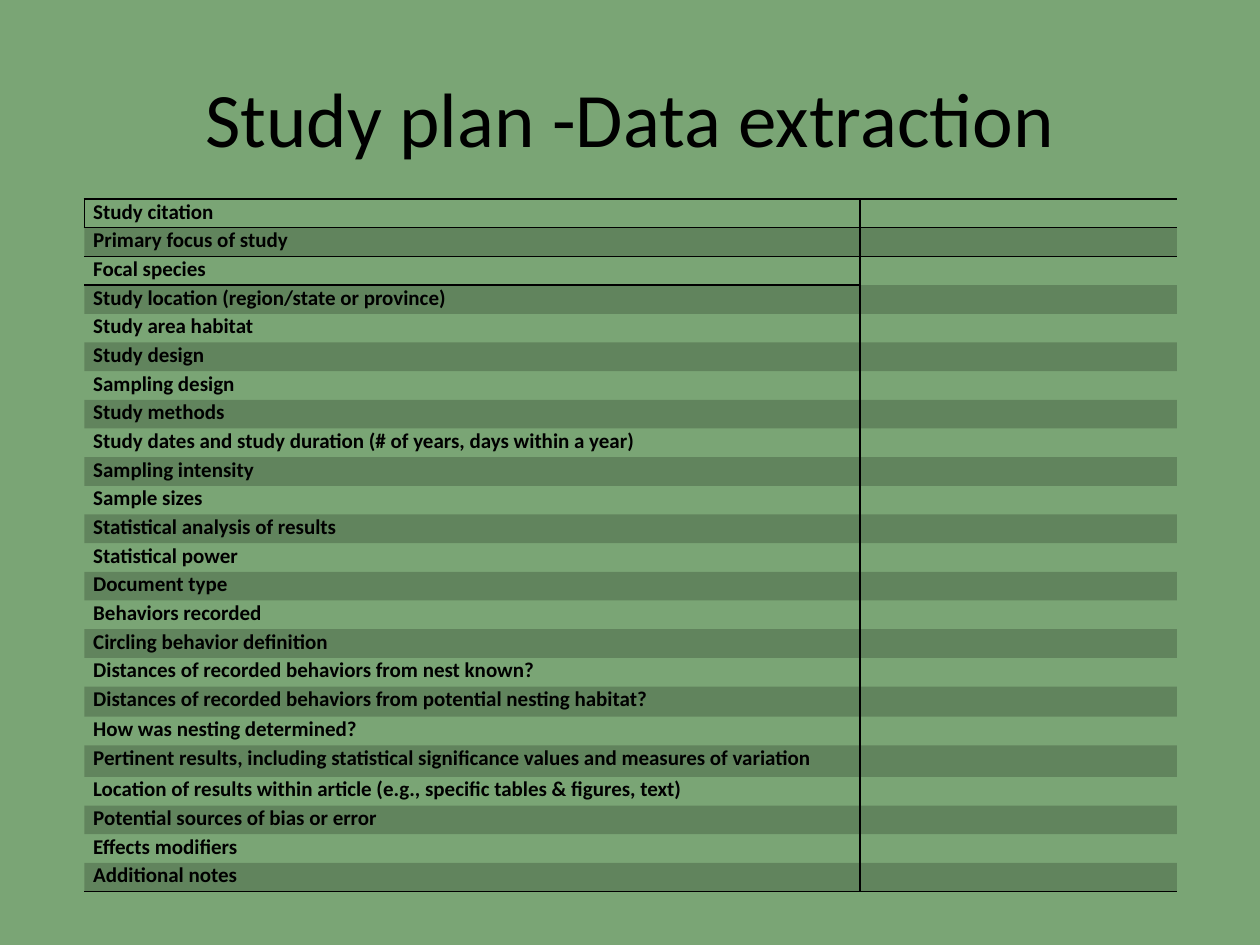
from lxml import etree
from pptx import Presentation
from pptx import util as u
from pptx.dml.color import RGBColor
from pptx.enum import text
from pptx.oxml.ns import qn

TITLE = "Study plan -Data extraction"
FIELDS = [
    "Study citation",
    "Primary focus of study",
    "Focal species",
    "Study location (region/state or province)",
    "Study area habitat",
    "Study design",
    "Sampling design",
    "Study methods",
    "Study dates and study duration (# of years, days within a year)",
    "Sampling intensity",
    "Sample sizes",
    "Statistical analysis of results",
    "Statistical power",
    "Document type",
    "Behaviors recorded",
    "Circling behavior definition",
    "Distances of recorded behaviors from nest known?",
    "Distances of recorded behaviors from potential nesting habitat?",
    "How was nesting determined?",
    "Pertinent results, including statistical significance values and measures of variation",
    "Location of results within article (e.g., specific tables & figures, text)",
    "Potential sources of bias or error",
    "Effects modifiers",
    "Additional notes",
]
TALLER_ROWS = {17: 0.24, 19: 0.25}  # row index: height in inches

GREEN, BLACK = "7AA575", "000000"
FONT = "Calibri"
FIELD_SIZE = 12
WIDTH, HEIGHT = 10, 7.5
TABLE_LEFT, TABLE_TOP, TABLE_WIDTH, TABLE_HEIGHT = 0.67, 1.58, 8.67, 5.5
FIELD_SHARE = 0.71
BAND_OPACITY = 20
NO_STYLE = "{2D5ABB26-0587-4C30-8999-92F81FD0307C}"


def colour(value):
    return RGBColor.from_string(value)


def write(frame, words, size, bold=False, align=text.PP_ALIGN.LEFT, hanging=0):
    paragraph = frame.paragraphs[0]
    paragraph.alignment = align
    if hanging:
        properties = paragraph._p.get_or_add_pPr()
        properties.set("marL", str(u.Inches(hanging)))
        properties.set("indent", str(-u.Inches(hanging)))
    run = paragraph.add_run()
    run.text = words
    run.font.name, run.font.size, run.font.bold = FONT, u.Pt(size), bold
    run.font.color.rgb = colour(BLACK)


def rule(cell, sides, points=1):
    """Draw borders on the given sides, a string drawn from LRTB."""
    properties = cell._tc.get_or_add_tcPr()
    for place, side in enumerate(s for s in "LRTB" if s in sides):
        line = etree.Element(qn(f"a:ln{side}"), w=str(u.Pt(points)))
        fill = etree.SubElement(line, qn("a:solidFill"))
        etree.SubElement(fill, qn("a:srgbClr"), val=BLACK)
        properties.insert(place, line)


def shade(cell, banded):
    if not banded:
        cell.fill.background()
        return
    cell.fill.solid()
    cell.fill.fore_color.rgb = colour(BLACK)
    tint = cell._tc.tcPr.find(f"{qn('a:solidFill')}/{qn('a:srgbClr')}")
    etree.SubElement(tint, qn("a:alpha"), val=str(BAND_OPACITY * 1000))


def sides_of(row, column):
    sides = "R" if column == 0 else "L"
    if row == 0:
        sides += "TB" + ("L" if column == 0 else "")
    if row == 1:
        sides += "T" + ("B" if column == 0 else "")
    if row == 2 and column == 0:
        sides += "T"
    if row == len(FIELDS) - 1:
        sides += "B"
    return sides


def add_title(slide):
    title = slide.shapes.add_textbox(
        u.Inches(WIDTH * 0.05), u.Inches(HEIGHT * 0.04),
        u.Inches(WIDTH * 0.9), u.Inches(1.25))
    frame = title.text_frame
    frame.word_wrap = True
    frame.vertical_anchor = text.MSO_ANCHOR.MIDDLE
    write(frame, TITLE, 44, align=text.PP_ALIGN.CENTER)


def add_fields(slide):
    table = slide.shapes.add_table(
        len(FIELDS), 2, u.Inches(TABLE_LEFT), u.Inches(TABLE_TOP),
        u.Inches(TABLE_WIDTH), u.Inches(TABLE_HEIGHT)).table
    table.first_row = table.horz_banding = False
    table._tbl.tblPr.find(qn("a:tableStyleId")).text = NO_STYLE
    for column, share in zip(table.columns, (FIELD_SHARE, 1 - FIELD_SHARE)):
        column.width = u.Inches(TABLE_WIDTH * share)

    plain_height = ((TABLE_HEIGHT - sum(TALLER_ROWS.values()))
                    / (len(FIELDS) - len(TALLER_ROWS)))
    for row, field in enumerate(FIELDS):
        table.rows[row].height = u.Inches(TALLER_ROWS.get(row, plain_height))
        for column in range(2):
            cell = table.cell(row, column)
            cell.margin_left = cell.margin_right = u.Inches(0.07)
            cell.margin_top = cell.margin_bottom = 0
            shade(cell, banded=row % 2 == 1)
            rule(cell, sides_of(row, column))
        write(table.cell(row, 0).text_frame, field, FIELD_SIZE, bold=True, hanging=0.25)
        # An empty cell takes its line height from the end-of-paragraph size.
        answer = table.cell(row, 1).text_frame.paragraphs[0]
        etree.SubElement(answer._p, qn("a:endParaRPr"), sz=str(FIELD_SIZE * 100))


def main():
    deck = Presentation()
    deck.slide_width, deck.slide_height = u.Inches(WIDTH), u.Inches(HEIGHT)
    slide = deck.slides.add_slide(deck.slide_layouts[6])
    slide.background.fill.solid()
    slide.background.fill.fore_color.rgb = colour(GREEN)
    add_title(slide)
    add_fields(slide)
    deck.save("out.pptx")


if __name__ == "__main__":
    main()
